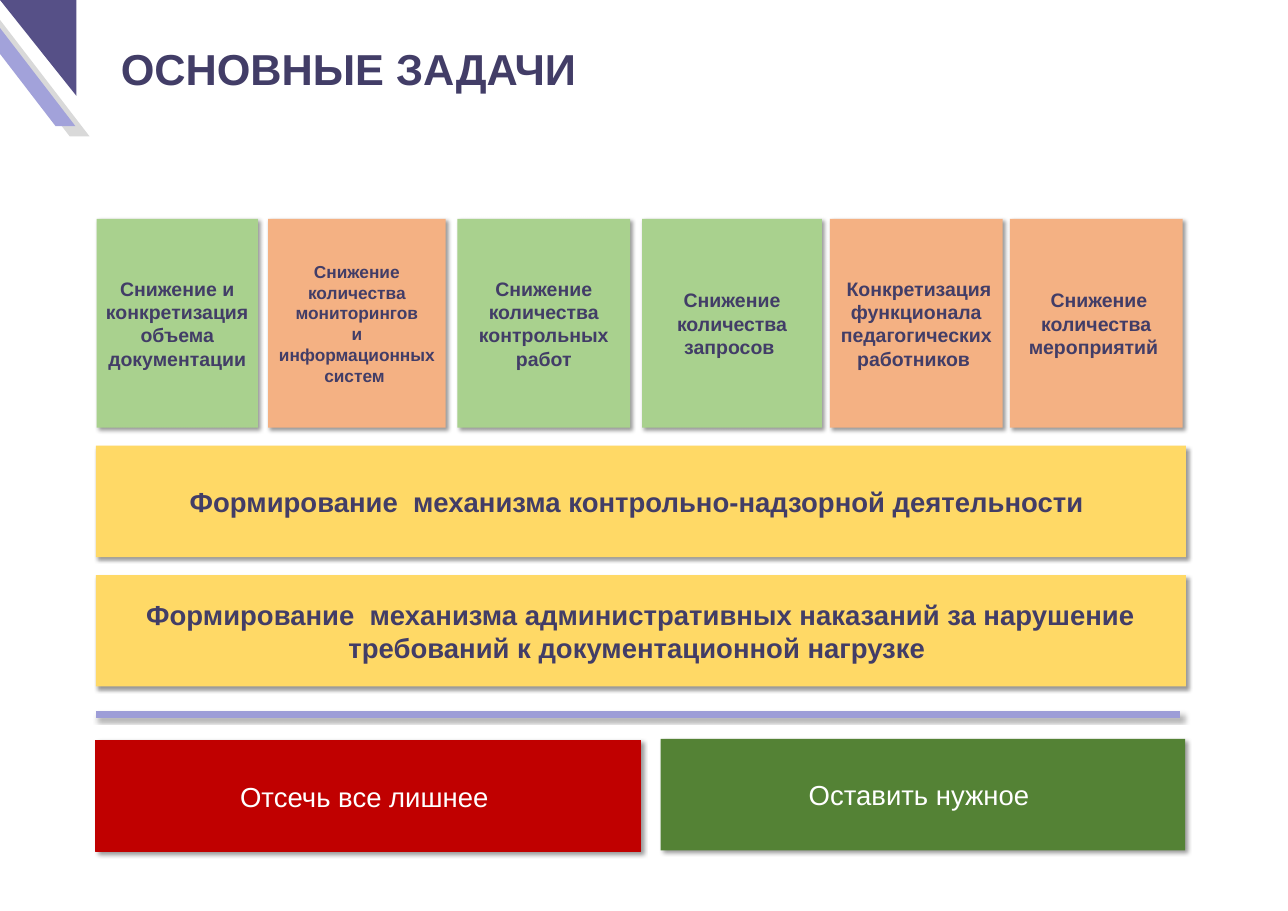
from dataclasses import dataclass

from lxml import etree
from pptx import Presentation
from pptx.dml.color import RGBColor
from pptx.enum.shapes import MSO_CONNECTOR, MSO_SHAPE
from pptx.enum.text import MSO_ANCHOR, MSO_AUTO_SIZE, PP_ALIGN
from pptx.oxml.ns import qn
from pptx.util import Pt

RECT = MSO_SHAPE.RECTANGLE
STRIPE = MSO_SHAPE.PARALLELOGRAM
CORNER = MSO_SHAPE.RIGHT_TRIANGLE
STRAIGHT = MSO_CONNECTOR.STRAIGHT
LEFT, CENTER = PP_ALIGN.LEFT, PP_ALIGN.CENTER
TOP, MIDDLE = MSO_ANCHOR.TOP, MSO_ANCHOR.MIDDLE


@dataclass(frozen=True)
class Theme:
    font: str = "Arial"
    ink: str = "423D67"
    white: str = "FFFFFF"
    green: str = "A9D18E"
    orange: str = "F4B183"
    yellow: str = "FFD966"
    red: str = "C00000"
    dark_green: str = "548235"
    rule: str = "9D9DD7"
    grey: str = "D9D9D9"
    lilac: str = "A2A2DA"
    violet: str = "565087"
    shadow: str = "000000"
    title_size: float = 40
    bar_size: float = 25.4
    card_size: float = 18
    small_size: float = 16


T = Theme()

TITLE = "ОСНОВНЫЕ ЗАДАЧИ"
# left, width, fill, type size, paragraphs
CARDS = [
    (89.3, 149, T.green, T.card_size,
     ["Снижение и конкретизация объема документации"]),
    (247.7, 164.2, T.orange, T.small_size,
     ["Снижение количества мониторингов", "и", "информационных систем "]),
    (422.6, 159.8, T.green, T.card_size,
     ["Снижение количества контрольных работ"]),
    (593.3, 166.3, T.green, T.card_size,
     ["Снижение количества запросов "]),
    (766.8, 159.8, T.orange, T.card_size,
     [" Конкретизация функционала педагогических работников "]),
    (933.1, 159.8, T.orange, T.card_size,
     [" Снижение количества мероприятий "]),
]
MECHANISMS = [
    "Формирование  механизма контрольно-надзорной деятельности ",
    "Формирование  механизма административных наказаний за нарушение "
    "требований к документационной нагрузке ",
]
# left, top, width, fill, outline, text
VERDICTS = [
    (88.6, 684, 503.3, T.red, T.red, "Отсечь все лишнее "),
    (610.6, 682.6, 484.6, T.dark_green, None, "Оставить нужное "),
]
# shape, left, top, width, height, fill
CORNER_ART = [
    (STRIPE, -25.2, 9.4, 108, 116.6, T.grey),
    (STRIPE, -38.2, 0, 108, 116.6, T.lilac),
    (CORNER, 0, 0, 70.6, 88.6, T.violet),
]

SLIDE_W, SLIDE_H = 1190.2, 841.7
BAR_LEFT, BAR_W, BAR_H = 88.6, 1007.3, 103
BAR_TOP, BAR_STEP = 411.8, 119.5
CARD_TOP, CARD_H = 202.2, 193
RULE_Y, RULE_RIGHT, RULE_WEIGHT = 660.2, 1090.8, 6


def rgb(value):
    return RGBColor.from_string(value)


def add_shadow(shape):
    """Soft shadow: 4 pt blur, 3 pt down and right, 40 % opaque."""
    effects = etree.SubElement(shape._element.spPr, qn("a:effectLst"))
    outer = etree.SubElement(effects, qn("a:outerShdw"), blurRad=str(Pt(4)),
                             dist=str(Pt(3)), dir="2700000", algn="tl", rotWithShape="0")
    color = etree.SubElement(outer, qn("a:srgbClr"), val=T.shadow)
    etree.SubElement(color, qn("a:alpha"), val="40000")


def add_solid(s, kind, left, top, width, height, fill, outline=None):
    shape = s.shapes.add_shape(kind, Pt(left), Pt(top), Pt(width), Pt(height))
    shape.fill.solid()
    shape.fill.fore_color.rgb = rgb(fill)
    if outline:
        shape.line.color.rgb = rgb(outline)
        shape.line.width = Pt(1)
    else:
        shape.line.fill.background()
    return shape


def write(tf, paragraphs, size, color, bold=True, align=CENTER, anchor=MIDDLE):
    tf.word_wrap = True
    tf.vertical_anchor = anchor
    for i, text in enumerate(paragraphs):
        p = tf.add_paragraph() if i else tf.paragraphs[0]
        p.text = text
        p.alignment = align
        p.font.name = T.font
        p.font.size = Pt(size)
        p.font.bold = bold
        p.font.color.rgb = rgb(color)


def add_box(s, left, top, width, height, fill, paragraphs, size,
            color=T.ink, bold=True, outline=None):
    box = add_solid(s, RECT, left, top, width, height, fill, outline)
    add_shadow(box)
    write(box.text_frame, paragraphs, size, color, bold)


def add_corner_art(s):
    for kind, left, top, width, height, fill in CORNER_ART:
        shape = add_solid(s, kind, left, top, width, height, fill)
        shape.shadow.inherit = False
        xfrm = shape._element.spPr.find(qn("a:xfrm"))
        xfrm.set("flipH", "1")
        if kind == STRIPE:
            shape.adjustments[0] = 0.83
        else:
            xfrm.set("flipV", "1")


def add_title(s):
    title = s.shapes.title
    title.left, title.top = Pt(111.6), Pt(35.3)
    title.width, title.height = Pt(782.6), Pt(55.4)
    tf = title.text_frame
    tf.auto_size = MSO_AUTO_SIZE.NONE
    tf.margin_left = 0
    write(tf, [TITLE], T.title_size, T.ink, align=LEFT, anchor=TOP)


def add_rule(s):
    rule = s.shapes.add_connector(STRAIGHT, Pt(BAR_LEFT), Pt(RULE_Y),
                                  Pt(RULE_RIGHT), Pt(RULE_Y))
    rule.line.color.rgb = rgb(T.rule)
    rule.line.width = Pt(RULE_WEIGHT)
    add_shadow(rule)


def main():
    prs = Presentation()
    prs.slide_width, prs.slide_height = Pt(SLIDE_W), Pt(SLIDE_H)
    s = prs.slides.add_slide(prs.slide_layouts.get_by_name("Title Only"))
    add_corner_art(s)
    add_title(s)
    for left, width, fill, size, paragraphs in CARDS:
        add_box(s, left, CARD_TOP, width, CARD_H, fill, paragraphs, size)
    for i, text in enumerate(MECHANISMS):
        add_box(s, BAR_LEFT, BAR_TOP + i * BAR_STEP, BAR_W, BAR_H,
                T.yellow, [text], T.bar_size)
    add_rule(s)
    for left, top, width, fill, outline, text in VERDICTS:
        add_box(s, left, top, width, BAR_H, fill, [text], T.bar_size,
                T.white, bold=False, outline=outline)
    prs.save("out.pptx")


if __name__ == "__main__":
    main()
